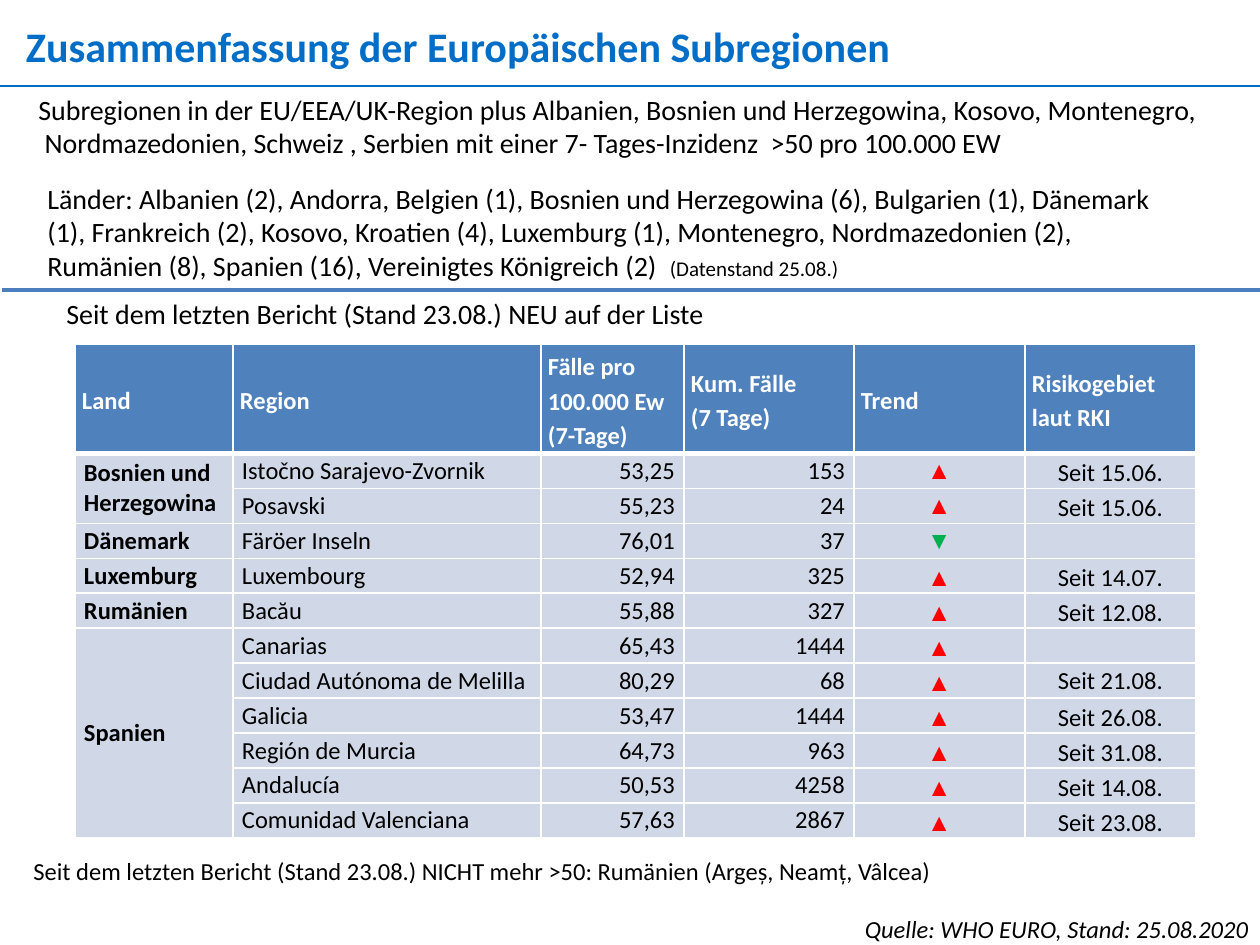
"""Build the slide summarising European subregions with a high 7-day incidence."""
from lxml import etree
from pptx import Presentation
from pptx import util as u
from pptx.dml.color import RGBColor
from pptx.enum import shapes, text
from pptx.oxml.ns import qn

TITLE = "Zusammenfassung der Europäischen Subregionen"
TEXTS = [
    ((679, 908, 582, 43), "right", [("Quelle: WHO EURO, Stand: 25.08.2020", "small", True)]),
    ((26, 86, 1188, 81), "left", [(
        "Subregionen in der EU/EEA/UK-Region plus Albanien, Bosnien und Herzegowina, Kosovo, "
        "Montenegro,  Nordmazedonien, Schweiz , Serbien mit einer 7- Tages-Inzidenz  "
        ">50 pro 100.000 EW", "body", False)]),
    ((54, 290, 1002, 47), "left", [
        ("Seit dem letzten Bericht (Stand 23.08.) NEU auf der Liste", "body", False)]),
    ((21, 850, 1191, 43), "left", [(
        "Seit dem letzten Bericht (Stand 23.08.) NICHT mehr >50: "
        "Rumänien (Argeș, Neamț, Vâlcea)", "small", False)]),
    ((35, 175, 1160, 115), "left", [
        ("Länder: Albanien (2), Andorra, Belgien (1), Bosnien und Herzegowina (6), "
         "Bulgarien (1), Dänemark (1), Frankreich (2), Kosovo, Kroatien (4), Luxemburg (1), "
         "Montenegro, Nordmazedonien (2), Rumänien (8), Spanien (16), "
         "Vereinigtes Königreich (2)  ", "body", False),
        ("(Datenstand 25.08.)", "note", False)]),
]
RULES = [((0, 86, 1260, 86), "title", 1.5), ((2, 290, 1264, 290), "rule", 1.75)]
HEADERS = [["Land"], ["Region"], ["Fälle pro 100.000 Ew", "(7-Tage)"],
           ["Kum. Fälle", "(7 Tage)"], ["Trend"], ["Risikogebiet laut RKI"]]
COUNTRIES = {
    "Bosnien und Herzegowina": [
        ("Istočno Sarajevo-Zvornik", "53,25", "153", "▲", "Seit 15.06."),
        ("Posavski", "55,23", "24", "▲", "Seit 15.06.")],
    "Dänemark": [("Färöer Inseln", "76,01", "37", "▼", "")],
    "Luxemburg": [("Luxembourg", "52,94", "325", "▲", "Seit 14.07.")],
    "Rumänien": [("Bacău", "55,88", "327", "▲", "Seit 12.08.")],
    "Spanien": [
        ("Canarias", "65,43", "1444", "▲", ""),
        ("Ciudad Autónoma de Melilla", "80,29", "68", "▲", "Seit 21.08."),
        ("Galicia", "53,47", "1444", "▲", "Seit 26.08."),
        ("Región de Murcia", "64,73", "963", "▲", "Seit 31.08."),
        ("Andalucía", "50,53", "4258", "▲", "Seit 14.08."),
        ("Comunidad Valenciana", "57,63", "2867", "▲", "Seit 23.08.")],
}
TABLE_LEFT, TABLE_TOP = 75, 344
COLUMNS = [158, 308, 143, 170, 171, 171]
COLUMN_ALIGN = ["left", "left", "right", "right", "center", "center"]
HEADER_HEIGHT, ROW_HEIGHT, INDENT = 108, 35, 9
LAST_INDENTED_TREND = 3
INDENTED_DATE = "Seit 21.08."

THEME = {
    "font": "Calibri", "symbol_font": "Arial",
    "sizes": {"title": 24, "body": 16, "small": 14, "note": 12},
    "colors": {"title": "006EC7", "rule": "4B7EBC", "text": "000000", "white": "FFFFFF",
               "header": "4F81BD", "cell": "D0D8E8", "▲": "FF0000", "▼": "00B050"},
}
ALIGN = {"left": text.PP_ALIGN.LEFT, "right": text.PP_ALIGN.RIGHT,
         "center": text.PP_ALIGN.CENTER}


def px(value):
    return u.Emu(round(value * u.Inches(1) / 126))


def color(name):
    return RGBColor.from_string(THEME["colors"][name])


def add_run(paragraph, words, size, ink="text", bold=False, italic=False, font="font"):
    run = paragraph.add_run()
    run.text = words
    run.font.name = THEME[font]
    run.font.size = u.Pt(THEME["sizes"][size])
    run.font.color.rgb = color(ink)
    run.font.bold, run.font.italic = bold, italic


def add_title(slide):
    title = slide.shapes.title
    title.left, title.top, title.width, title.height = map(px, (26, 20, 1213, 50))
    frame = title.text_frame
    frame.margin_left = frame.margin_top = frame.margin_right = frame.margin_bottom = 0
    frame.vertical_anchor = text.MSO_ANCHOR.TOP
    frame.paragraphs[0].alignment = ALIGN["left"]
    add_run(frame.paragraphs[0], TITLE, "title", "title", bold=True)


def add_text(slide, box, align, runs):
    frame = slide.shapes.add_textbox(*map(px, box)).text_frame
    frame.word_wrap = True
    frame.auto_size = text.MSO_AUTO_SIZE.SHAPE_TO_FIT_TEXT
    paragraph = frame.paragraphs[0]
    paragraph.alignment = ALIGN[align]
    for words, size, italic in runs:
        add_run(paragraph, words, size, italic=italic)


def add_rule(slide, ends, ink, width):
    line = slide.shapes.add_connector(shapes.MSO_CONNECTOR.STRAIGHT, *map(px, ends))
    line.line.color.rgb = color(ink)
    line.line.width = u.Pt(width)
    etree.SubElement(line._element.spPr, qn("a:effectLst"))


def style_cell(cell, fill, margins, top, bottom):
    properties = cell._tc.get_or_add_tcPr()
    for side, width in (("L", 1), ("R", 1), ("T", top), ("B", bottom)):
        border = etree.SubElement(properties, qn(f"a:ln{side}"), w=str(u.Pt(width)))
        solid = etree.SubElement(border, qn("a:solidFill"))
        etree.SubElement(solid, qn("a:srgbClr"), val=THEME["colors"]["white"])
    cell.fill.solid()
    cell.fill.fore_color.rgb = color(fill)
    cell.vertical_anchor = text.MSO_ANCHOR.MIDDLE
    cell.margin_left = cell.margin_right = px(margins[0])
    cell.margin_top = cell.margin_bottom = px(margins[1])
    end = cell.text_frame.paragraphs[0]._p.get_or_add_endParaRPr()
    end.set("sz", str(THEME["sizes"]["small"] * 100))


def fill_header(cell, lines):
    style_cell(cell, "header", (7, 4), 1, 3)
    frame = cell.text_frame
    for index, words in enumerate(lines):
        paragraph = frame.add_paragraph() if index else frame.paragraphs[0]
        paragraph.line_spacing = 1.15
        add_run(paragraph, words, "small", "white", bold=True)


def fill_body(cell, words, row, column):
    style_cell(cell, "cell", (0, 0), 3 if row == 1 else 1, 1)
    if not words:
        return
    paragraph = cell.text_frame.paragraphs[0]
    paragraph.alignment = ALIGN[COLUMN_ALIGN[column]]
    indented = (column < 4 or words == INDENTED_DATE
                or column == 4 and row <= LAST_INDENTED_TREND)
    if indented:
        paragraph.space_before = paragraph.space_after = u.Pt(2)
        for side in ("marL", "marR"):
            paragraph._p.get_or_add_pPr().set(side, str(px(INDENT)))
    else:
        paragraph.line_spacing = 1.15
    is_trend = column == 4
    add_run(paragraph, words, "small", words if is_trend else "text", bold=column == 0,
            font="symbol_font" if is_trend else "font")


def add_region_table(slide):
    rows = [(country if index == 0 else "", *region)
            for country, regions in COUNTRIES.items() for index, region in enumerate(regions)]
    height = HEADER_HEIGHT + ROW_HEIGHT * len(rows)
    box = map(px, (TABLE_LEFT, TABLE_TOP, sum(COLUMNS), height))
    table = slide.shapes.add_table(len(rows) + 1, len(COLUMNS), *box).table
    table.horz_banding = False
    for column, width in zip(table.columns, COLUMNS):
        column.width = px(width)
    for index, row in enumerate(table.rows):
        row.height = px(ROW_HEIGHT if index else HEADER_HEIGHT)
    for column, lines in enumerate(HEADERS):
        fill_header(table.cell(0, column), lines)
    for row, values in enumerate(rows, 1):
        for column, words in enumerate(values):
            fill_body(table.cell(row, column), words, row, column)
    first = 1
    for regions in COUNTRIES.values():
        if len(regions) > 1:
            table.cell(first, 0).merge(table.cell(first + len(regions) - 1, 0))
        first += len(regions)


def main():
    presentation = Presentation()
    presentation.slide_width, presentation.slide_height = px(1260), px(945)
    slide = presentation.slides.add_slide(presentation.slide_layouts[5])
    add_title(slide)
    for item in TEXTS:
        add_text(slide, *item)
    add_region_table(slide)
    for rule in RULES:
        add_rule(slide, *rule)
    presentation.save("out.pptx")


if __name__ == "__main__":
    main()
